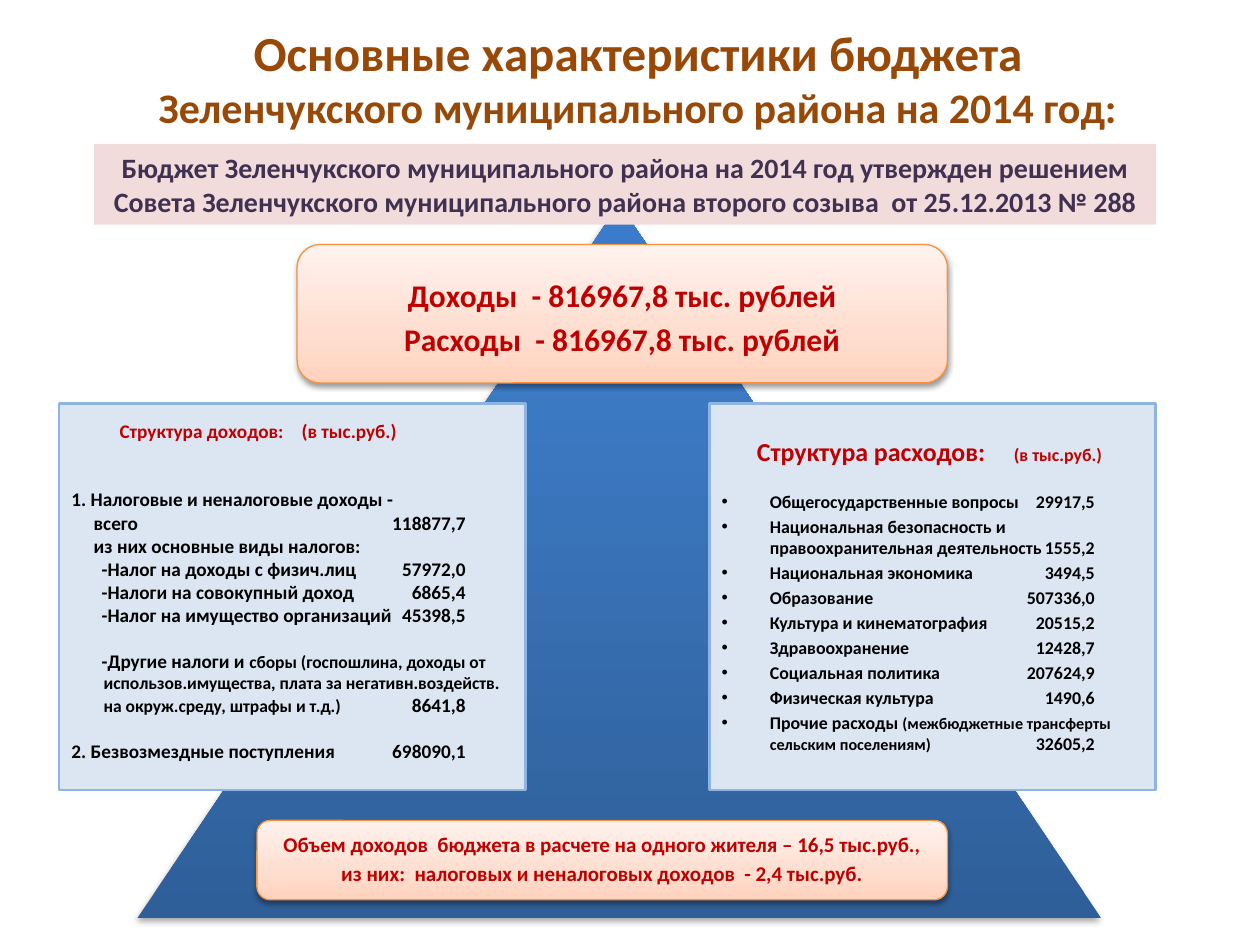
from lxml import etree
from pptx import Presentation
from pptx.dml.color import RGBColor
from pptx.enum import shapes, text
from pptx.oxml.ns import qn
from pptx.util import Cm, Pt

BROWN = RGBColor(0x98, 0x48, 0x07)
RED = RGBColor(0xC0, 0x00, 0x00)
BLACK = RGBColor(0x00, 0x00, 0x00)
PURPLE = RGBColor(0x40, 0x31, 0x52)
PINK = RGBColor(0xF2, 0xDC, 0xDB)
PALE_BLUE = RGBColor(0xDC, 0xE6, 0xF2)
SKY = RGBColor(0x8E, 0xB4, 0xE3)
ORANGE = RGBColor(0xF6, 0x92, 0x40)
BLUES = [(0, RGBColor(0x2F, 0x5F, 0x99)), (80, RGBColor(0x3D, 0x7C, 0xC7)),
         (100, RGBColor(0x3A, 0x7C, 0xCB))]
PEACHES = [(0, RGBColor(0xFF, 0xD2, 0xBD)), (35, RGBColor(0xFF, 0xDE, 0xD0)),
           (100, RGBColor(0xFF, 0xF2, 0xED))]

INCOME = [
    ("1. Налоговые и неналоговые доходы -", 0, 26),
    ("всего\t118877,7", 0.45, 0),
    ("из них основные виды налогов:", 0.45, 0),
    ("-Налог на доходы с физич.лиц\t57972,0", 0.61, 0),
    ("-Налоги на совокупный доход\t6865,4", 0.61, 0),
    ("-Налог на имущество организаций\t45398,5", 0.61, 0),
    ("-Другие налоги и |сборы (госпошлина, доходы от", 0.61, 13),
    ("|использов.имущества, плата за негативн.воздейств.", 0.65, 0),
    ("|на окруж.среду, штрафы и т.д.)|\t8641,8", 0.65, 0),
    ("2. Безвозмездные поступления\t698090,1", 0, 13),
]
SPENDING = [
    "Общегосударственные вопросы\t29917,5",
    "Национальная безопасность и правоохранительная деятельность\t1555,2",
    "Национальная экономика\t3494,5",
    "Образование\t507336,0",
    "Культура и кинематография\t20515,2",
    "Здравоохранение\t12428,7",
    "Социальная политика\t207624,9",
    "Физическая культура\t1490,6",
    "Прочие расходы |(межбюджетные трансферты сельским поселениям)|\t32605,2",
]


def add_block(slide, kind, box, fill, line=None, width=0.75):
    block = slide.shapes.add_shape(kind, *(Cm(v) for v in box))
    block.shadow.inherit = False
    if isinstance(fill, list):
        add_gradient(block, fill)
    else:
        block.fill.solid()
        block.fill.fore_color.rgb = fill
    if line is None:
        block.line.fill.background()
    else:
        block.line.color.rgb = line
        block.line.width = Pt(width)
    block.text_frame.word_wrap = True
    return block


def add_gradient(block, stops):
    block.fill.gradient()
    block.fill.gradient_angle = 90
    stop_list = block.element.spPr.find(qn("a:gradFill")).find(qn("a:gsLst"))
    for stop in list(stop_list):
        stop_list.remove(stop)
    for position, color in stops:
        stop = etree.SubElement(stop_list, qn("a:gs"), pos=str(position * 1000))
        etree.SubElement(stop, qn("a:srgbClr"), val=str(color))


def add_shadow(block, opacity, distance):
    effects = block.element.spPr.find(qn("a:effectLst"))
    shadow = etree.SubElement(effects, qn("a:outerShdw"), blurRad=str(Pt(3.1)),
                              dist=str(Pt(distance)), dir="5400000", rotWithShape="0")
    color = etree.SubElement(shadow, qn("a:srgbClr"), val="000000")
    etree.SubElement(color, qn("a:alpha"), val=str(opacity * 1000))


def add_line(frame, wording, size, color, small=None, before=0, align=text.PP_ALIGN.LEFT,
             margin=0, tab=None, tab_kind="r", bullet=False):
    line = frame.paragraphs[0]
    if line.runs:
        line = frame.add_paragraph()
    properties = line._p.get_or_add_pPr()
    if margin:
        properties.set("marL", str(Cm(margin)))
    if bullet:
        properties.set("indent", str(-Cm(margin)))
        etree.SubElement(properties, qn("a:buFont"), typeface="Arial")
        etree.SubElement(properties, qn("a:buChar"), char="•")
    if tab:
        tabs = etree.SubElement(properties, qn("a:tabLst"))
        etree.SubElement(tabs, qn("a:tab"), pos=str(Cm(tab)), algn=tab_kind)
    line.alignment = align
    if before:
        line.space_before = Pt(before)
    line.font.name = "Calibri"
    line.font.bold = True
    line.font.color.rgb = color
    if small is None:
        line.font.size = Pt(size)
    for index, part in enumerate(wording.split("|")):
        if part:
            run = line.add_run()
            run.text = part
            if small is not None:
                run.font.size = Pt(small if index % 2 else size)
    return line


def add_title(slide, left, top, width, height):
    title = slide.shapes.add_textbox(Cm(left), Cm(top), Cm(width), Cm(height))
    title.text_frame.word_wrap = True
    for wording, size in (("Основные характеристики бюджета", 28),
                          ("Зеленчукского муниципального района на 2014 год:", 24)):
        add_line(title.text_frame, wording, size, BROWN, align=text.PP_ALIGN.CENTER)


def add_banner(slide, *box):
    banner = add_block(slide, shapes.MSO_SHAPE.RECTANGLE, box, PINK)
    add_line(banner.text_frame,
             "Бюджет Зеленчукского муниципального района на 2014 год утвержден решением "
             "Совета Зеленчукского муниципального района второго созыва  от 25.12.2013 № 288",
             16, PURPLE, align=text.PP_ALIGN.CENTER)


def add_pyramid(slide, *box):
    pyramid = add_block(slide, shapes.MSO_SHAPE.ISOSCELES_TRIANGLE, box, BLUES)
    add_shadow(pyramid, 35, 1.8)


def add_card(slide, box, lines, size, gap, drop=0):
    card = add_block(slide, shapes.MSO_SHAPE.ROUNDED_RECTANGLE, box, PEACHES, ORANGE)
    add_shadow(card, 38, 1.6)
    frame = card.text_frame
    frame.margin_top = Cm(0.1 + drop)
    frame.margin_bottom = Cm(0.1)
    frame.vertical_anchor = text.MSO_ANCHOR.MIDDLE
    for index, wording in enumerate(lines):
        line = add_line(frame, wording, size, RED, before=gap if index else 0,
                        align=text.PP_ALIGN.CENTER)
        line.line_spacing = 0.9


def add_panel(slide, box, top_margin):
    panel = add_block(slide, shapes.MSO_SHAPE.RECTANGLE, box, PALE_BLUE, SKY, 1.5)
    panel.text_frame.vertical_anchor = text.MSO_ANCHOR.TOP
    panel.text_frame.margin_top = Cm(top_margin)
    return panel.text_frame


def add_income(slide, *box):
    frame = add_panel(slide, box, 0.32)
    add_line(frame, "Структура доходов:\t(в тыс.руб.)", 11, RED,
             margin=0.97, tab=3.67, tab_kind="l")
    for wording, margin, before in INCOME:
        add_line(frame, wording, 11, BLACK, small=10 if "|" in wording else None,
                 before=before, margin=margin,
                 tab=7.95 - margin if "\t" in wording else None)


def add_spending(slide, *box):
    frame = add_panel(slide, box, 0.66)
    add_line(frame, "Структура расходов:|\t(в тыс.руб.)", 14.8, RED, small=10.2,
             margin=0.71, tab=5.18, tab_kind="l")
    for index, wording in enumerate(SPENDING):
        add_line(frame, wording, 10.2, BLACK, small=9.2 if "|" in wording else None,
                 before=2 if index else 13.5, margin=0.97, tab=8.35, bullet=True)


def main():
    deck = Presentation()
    deck.slide_width, deck.slide_height = Cm(25.4), Cm(19.05)
    slide = deck.slides.add_slide(deck.slide_layouts[6])
    add_pyramid(slide, 2.77, 4.11, 19.43, 14.4)
    add_card(slide, (5.99, 4.93, 13.11, 2.79),
             ["Доходы  - 816967,8 тыс. рублей", "Расходы  - 816967,8 тыс. рублей"],
             18, 6, drop=0.22)
    add_card(slide, (5.18, 16.54, 13.92, 1.6),
             ["Объем доходов  бюджета в расчете на одного жителя – 16,5 тыс.руб.,",
              "из них:  налоговых и неналоговых доходов  - 2,4 тыс.руб."], 12, 4)
    add_title(slide, 1.9, 0.33, 21.92, 2.49)
    add_income(slide, 1.19, 8.13, 9.4, 7.8)
    add_spending(slide, 14.3, 8.13, 8.99, 7.8)
    add_banner(slide, 1.9, 2.9, 21.41, 1.63)
    deck.save("out.pptx")


if __name__ == "__main__":
    main()
